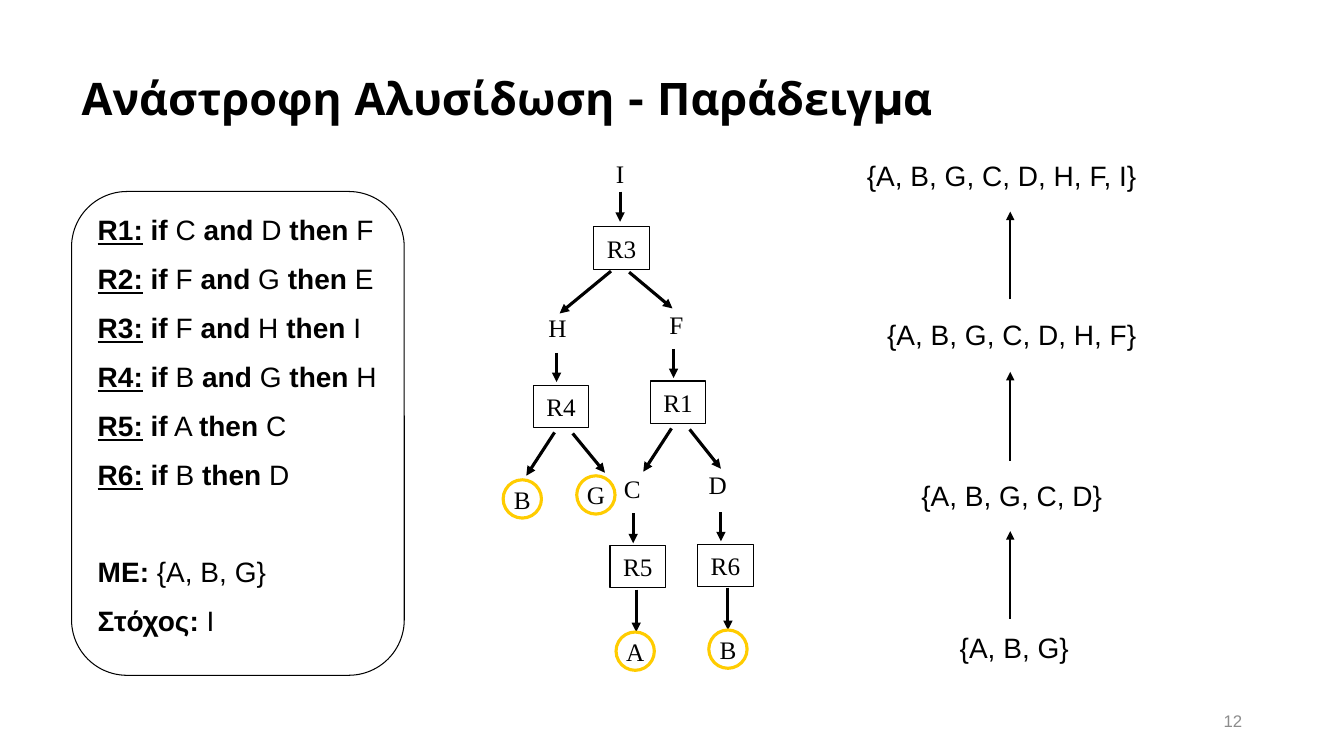
from pptx import Presentation
from pptx import util as u
from pptx.dml import color
from pptx.enum import shapes, text
from pptx.oxml import ns
from lxml import etree

BLACK, GOLD, GREY = "000000", "FFCC00", "8C8C8C"
SANS, SERIF, HEADING = "Arial", "Times New Roman", "Montserrat"
LEFT, CENTER, RIGHT = text.PP_ALIGN.LEFT, text.PP_ALIGN.CENTER, text.PP_ALIGN.RIGHT
TOP, MIDDLE = text.MSO_ANCHOR.TOP, text.MSO_ANCHOR.MIDDLE
RULES = [("R1", "C *and* D", "F"), ("R2", "F *and* G", "E"), ("R3", "F *and* H", "I"),
         ("R4", "B *and* G", "H"), ("R5", "A", "C"), ("R6", "B", "D")]
GOALS = [("I", 6.01, 1.52), ("H", 5.34, 3.05), ("F", 6.54, 3.02),
         ("C", 6.09, 4.65), ("D", 6.93, 4.61)]
RULE_NODES = [("R3", 5.89, 2.25), ("R4", 5.29, 3.82), ("R1", 6.45, 3.78),
              ("R5", 6.05, 5.41), ("R6", 6.92, 5.4)]
FACTS = [("B", 4.99, 4.76), ("G", 5.72, 4.72), ("A", 6.11, 6.27), ("B", 7.03, 6.25)]
BRANCHES = [(6.15, 1.9, 6.15, 2.2), (6.06, 2.69, 5.55, 3.11), (6.24, 2.7, 6.67, 3.06),
            (5.52, 3.5, 5.52, 3.79), (6.68, 3.46, 6.68, 3.75),
            (5.5, 4.29, 5.22, 4.72), (5.68, 4.3, 6, 4.69),
            (6.66, 4.25, 6.38, 4.68), (6.84, 4.26, 7.15, 4.65),
            (6.28, 5.09, 6.28, 5.39), (7.15, 5.08, 7.15, 5.37),
            (6.31, 5.85, 6.31, 6.27), (7.22, 5.83, 7.22, 6.25)]
MEMORY = [("{A, B, G}", 9.42, 6.21, 1.82), ("{A, B, G, C, D}", 9.04, 4.7, 2.37),
          ("{A, B, G, C, D, H, F}", 8.7, 3.1, 3.21), ("{A, B, G, C, D, H, F, I}", 8.5, 1.52, 3.47)]
STEPS = [(6.14, 5.27), (4.57, 3.69), (2.97, 2.1)]


def rgb(value):
    """Turn a hex string into a colour."""
    return color.RGBColor.from_string(value)


def place(sp, *box):
    """Move and size a shape, in inches."""
    sp.left, sp.top, sp.width, sp.height = map(u.Inches, box)


def write(tf, words, font=SANS, size=20, hex_color=BLACK, align=LEFT, anchor=TOP, before=0):
    """Add a paragraph whose starred parts are bold, with rule names underlined."""
    tf.word_wrap, tf.vertical_anchor = True, anchor
    p = tf.paragraphs[0]
    if p.runs:
        p = tf.add_paragraph()
    p.alignment, p.space_before = align, u.Pt(before)
    for i, part in enumerate(words.split("*")):
        if part:
            r = p.add_run()
            r.text = part
            r.font.name, r.font.size, r.font.bold = font, u.Pt(size), i % 2 == 1
            r.font.underline = i % 2 == 1 and part.startswith("R")
            r.font.color.rgb = rgb(hex_color)
    return p


def add_label(s, words, *box, **fmt):
    """Add a text box."""
    sp = s.shapes.add_textbox(*map(u.Inches, box))
    write(sp.text_frame, words, **fmt)


def add_outline(s, kind, *box, hex_color=BLACK, width=0.75):
    """Add an unfilled shape."""
    sp = s.shapes.add_shape(kind, *map(u.Inches, box))
    sp.shadow.inherit = False
    sp.fill.background()
    sp.line.color.rgb, sp.line.width = rgb(hex_color), u.Pt(width)
    return sp


def add_node(s, kind, words, *box, **line):
    """Add an outlined tree node with a centred name."""
    tf = add_outline(s, kind, *box, **line).text_frame
    tf.margin_left = tf.margin_right = tf.margin_top = tf.margin_bottom = 0
    write(tf, words, font=SERIF, size=18, align=CENTER, anchor=MIDDLE)


def add_arrow(s, *ends, width=2.25):
    """Add a straight arrow between two points."""
    sp = s.shapes.add_connector(shapes.MSO_CONNECTOR.STRAIGHT, *map(u.Inches, ends))
    sp.line.color.rgb, sp.line.width = rgb(BLACK), u.Pt(width)
    etree.SubElement(sp.line._get_or_add_ln(), ns.qn("a:tailEnd"), type="triangle")
    etree.SubElement(sp._element.spPr, ns.qn("a:effectLst"))


def add_title(s, words):
    """Fill and move the title placeholder."""
    sp = s.shapes.title
    place(sp, 0.71, 0.28, 11.5, 1.45)
    sp.text_frame.auto_size = text.MSO_AUTO_SIZE.NONE
    p = write(sp.text_frame, f"*{words}*", font=HEADING, size=32, anchor=MIDDLE)
    p.line_spacing = 0.9


def add_rules(s):
    """Add the rounded panel with rules, working memory and goal."""
    sp = add_outline(s, shapes.MSO_SHAPE.ROUNDED_RECTANGLE, 0.71, 1.9, 3.3, 4.8)
    tf = sp.text_frame
    tf.margin_right = 0
    for i, (name, condition, result) in enumerate(RULES):
        write(tf, f"*{name}:* *if* {condition} *then* {result}", before=11 if i else 0)
    write(tf, "*ME:* {A, B, G}", before=45)
    write(tf, "*Στόχος:* I", before=11)


def add_tree(s):
    """Add the goal tree."""
    for ends in BRANCHES:
        add_arrow(s, *ends)
    for name, x, y in GOALS:
        add_label(s, name, x, y, 0.58, 0.5, font=SERIF, size=18)
    for name, x, y in RULE_NODES:
        add_node(s, shapes.MSO_SHAPE.RECTANGLE, name, x, y, 0.55, 0.42)
    for name, x, y in FACTS:
        add_node(s, shapes.MSO_SHAPE.OVAL, name, x, y, 0.38, 0.38, hex_color=GOLD, width=2.25)


def add_memory(s):
    """Add the growing working memory, from bottom to top."""
    for words, x, y, width in MEMORY:
        add_label(s, words, x, y, width, 0.44)
    for start, end in STEPS:
        add_arrow(s, 10.02, start, 10.02, end, width=1.5)


def main():
    """Build and save the slide."""
    prs = Presentation()
    prs.slide_width, prs.slide_height = u.Inches(13.33), u.Inches(7.5)
    s = prs.slides.add_slide(prs.slide_layouts[5])
    add_title(s, "Ανάστροφη Αλυσίδωση - Παράδειγμα")
    add_rules(s)
    add_tree(s)
    add_memory(s)
    add_label(s, "12", 9.42, 6.95, 3, 0.4, size=12, hex_color=GREY, align=RIGHT, anchor=MIDDLE)
    prs.save("out.pptx")


main()
